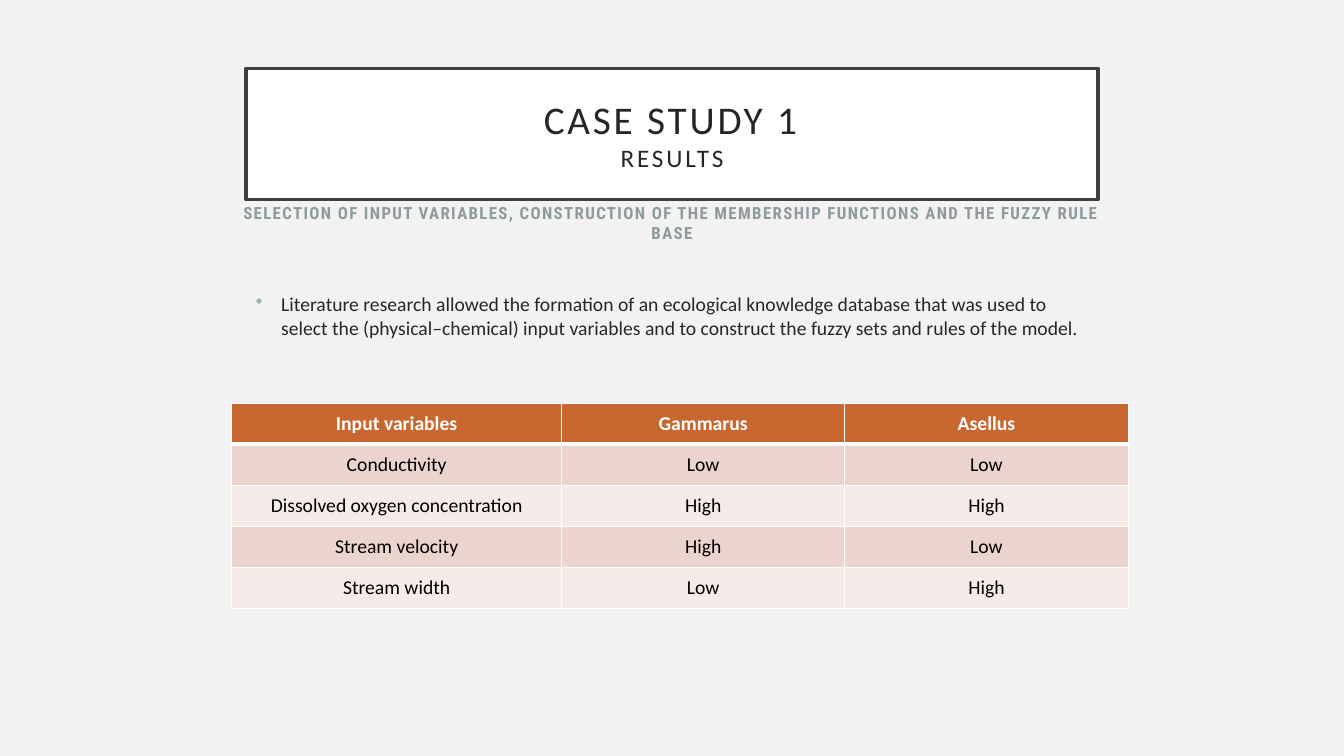
from dataclasses import dataclass

from lxml import etree
from pptx import Presentation
from pptx.dml.color import RGBColor
from pptx.enum.shapes import MSO_SHAPE
from pptx.enum.text import MSO_ANCHOR as ANCHOR, PP_ALIGN as ALIGN
from pptx.oxml.ns import qn
from pptx.util import Inches, Pt


@dataclass(frozen=True)
class Theme:
    font: str = "Calibri"
    accent_font: str = "Roboto Condensed"
    background: str = "F2F2F2"
    white: str = "FFFFFF"
    black: str = "000000"
    ink: str = "262626"
    frame: str = "404040"
    muted: str = "8E9A9E"
    bullet: str = "9BAFB5"
    header: str = "C96731"
    bands: tuple = ("EBD3CE", "F5EBE8")
    title_size: int = 28
    subtitle_size: int = 18
    body_size: int = 14
    caption_size: int = 12


THEME = Theme()
ROWS = [
    ("Input variables", "Gammarus", "Asellus"),
    ("Conductivity", "Low", "Low"),
    ("Dissolved oxygen concentration", "High", "High"),
    ("Stream velocity", "High", "Low"),
    ("Stream width", "Low", "High"),
]


def rgb(color):
    return RGBColor.from_string(color)


def set_font(font, size, color, name=THEME.font, bold=False):
    font.name, font.size, font.bold = name, Pt(size), bold
    font.color.rgb = rgb(color)


def set_tracking(r, points):
    r.font._element.set("spc", str(points * 100))


def add_title(s, box, title, subtitle):
    sp = s.shapes.add_shape(MSO_SHAPE.RECTANGLE, *map(Inches, box))
    sp.shadow.inherit = False
    sp.fill.solid()
    sp.fill.fore_color.rgb = rgb(THEME.white)
    sp.line.color.rgb = rgb(THEME.frame)
    sp.line.width = Pt(2.5)
    tf = sp.text_frame
    tf.word_wrap = True
    tf.vertical_anchor = ANCHOR.MIDDLE
    tf.margin_left = tf.margin_right = tf.margin_top = tf.margin_bottom = Inches(0.2)
    p = tf.paragraphs[0]
    p.alignment = ALIGN.CENTER
    for text, size in ((title, THEME.title_size), (subtitle, THEME.subtitle_size)):
        if p.runs:
            p.add_line_break()
        r = p.add_run()
        r.text = text
        set_font(r.font, size, THEME.ink)
        set_tracking(r, 2)


def add_text(s, box, text, anchor):
    tf = s.shapes.add_textbox(*map(Inches, box)).text_frame
    tf.word_wrap = True
    tf.vertical_anchor = anchor
    p = tf.paragraphs[0]
    p.space_before = Pt(10)
    p.add_run().text = text
    return p


def add_caption(s, box, text):
    p = add_text(s, box, text, ANCHOR.BOTTOM)
    p.alignment = ALIGN.CENTER
    set_font(p.font, THEME.caption_size, THEME.muted, THEME.accent_font, True)
    set_tracking(p.runs[0], 1)


def add_bullet(s, box, text):
    p = add_text(s, box, text, ANCHOR.TOP)
    set_font(p.font, THEME.body_size, THEME.ink)
    props = p._p.get_or_add_pPr()
    props.set("marL", str(Inches(0.25)))
    props.set("indent", str(-Inches(0.25)))
    color = etree.Element(qn("a:buClr"))
    etree.SubElement(color, qn("a:srgbClr"), val=THEME.bullet)
    char = etree.Element(qn("a:buChar"), char="•")
    props.find(qn("a:spcBef")).addnext(color)
    color.addnext(char)


def set_borders(cell, top, bottom):
    props = cell._tc.get_or_add_tcPr()
    widths = {"a:lnL": 1, "a:lnR": 1, "a:lnT": top, "a:lnB": bottom}
    for i, (tag, width) in enumerate(widths.items()):
        line = etree.Element(qn(tag), w=str(Pt(width)))
        fill = etree.SubElement(line, qn("a:solidFill"))
        etree.SubElement(fill, qn("a:srgbClr"), val=THEME.white)
        props.insert(i, line)


def add_variables_table(s, box, rows, widths):
    table = s.shapes.add_table(len(rows), len(widths), *map(Inches, box)).table
    for column, width in zip(table.columns, widths):
        column.width = Inches(width)
    for i, row in enumerate(rows):
        header = i == 0
        fill = THEME.header if header else THEME.bands[(i - 1) % 2]
        for j, text in enumerate(row):
            cell = table.cell(i, j)
            cell.text = text
            cell.vertical_anchor = ANCHOR.MIDDLE
            cell.fill.solid()
            cell.fill.fore_color.rgb = rgb(fill)
            set_borders(cell, 3 if i == 1 else 1, 3 if header else 1)
            p = cell.text_frame.paragraphs[0]
            p.alignment = ALIGN.CENTER
            set_font(p.font, THEME.body_size,
                     THEME.white if header else THEME.black, bold=header)


def add_results_slide(prs):
    s = prs.slides.add_slide(prs.slide_layouts[6])
    s.background.fill.solid()
    s.background.fill.fore_color.rgb = rgb(THEME.background)
    add_caption(s, (2.3, 1.69, 8.73, 0.77),
                "SELECTION OF INPUT VARIABLES, CONSTRUCTION OF THE MEMBERSHIP "
                "FUNCTIONS AND THE FUZZY RULE BASE")
    add_bullet(s, (2.44, 2.85, 8.45, 2.84),
               "Literature research allowed the formation of an ecological "
               "knowledge database that was used to select the "
               "(physical–chemical) input variables and to construct the fuzzy "
               "sets and rules of the model.")
    add_title(s, (2.44, 0.68, 8.45, 1.3), "CASE STUDY 1", "RESULTS")
    add_variables_table(s, (2.3, 4, 8.89, 2.04), ROWS, (3.27, 2.81, 2.81))


def main():
    prs = Presentation()
    prs.slide_width, prs.slide_height = Inches(13.33), Inches(7.5)
    add_results_slide(prs)
    prs.save("out.pptx")


if __name__ == "__main__":
    main()
